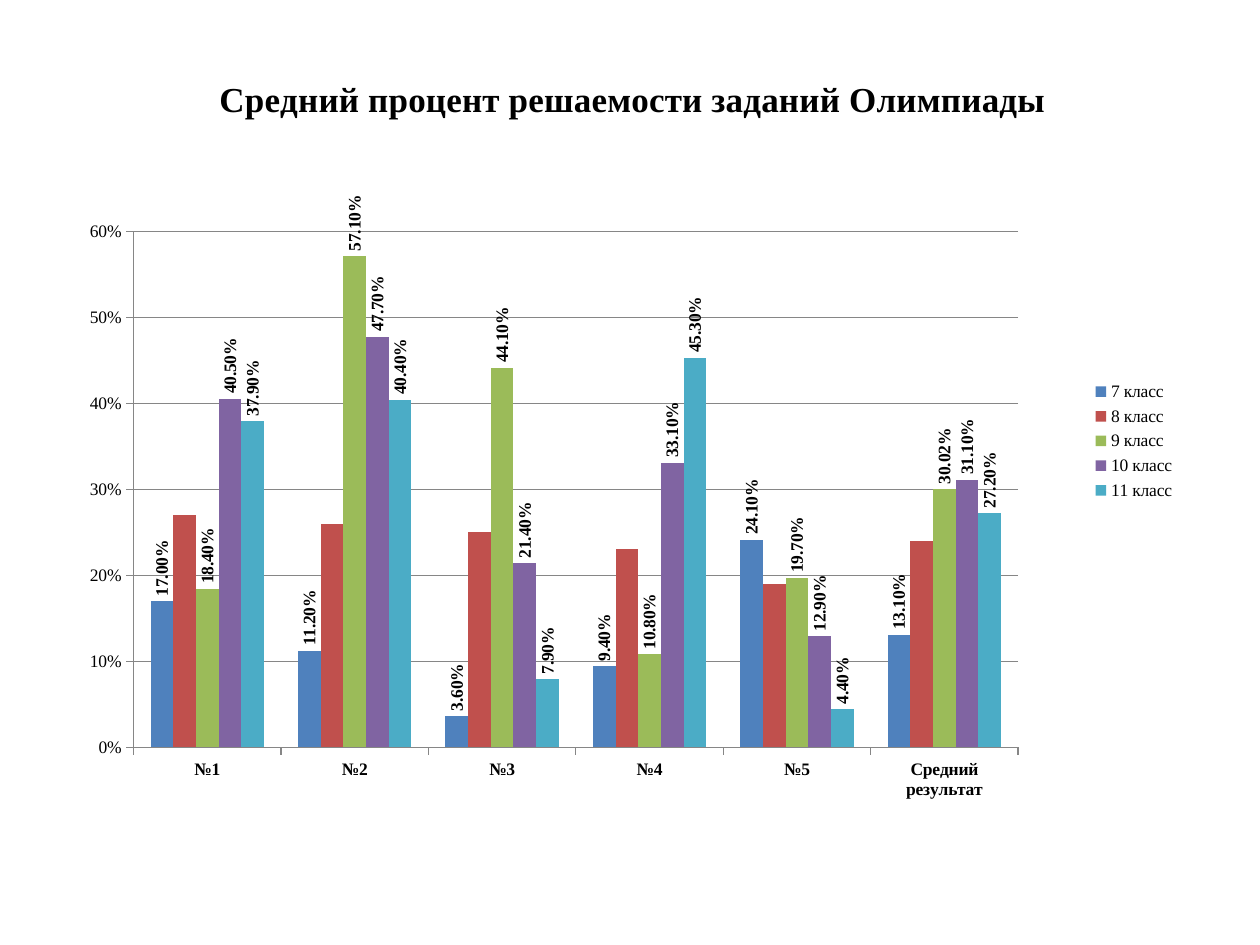
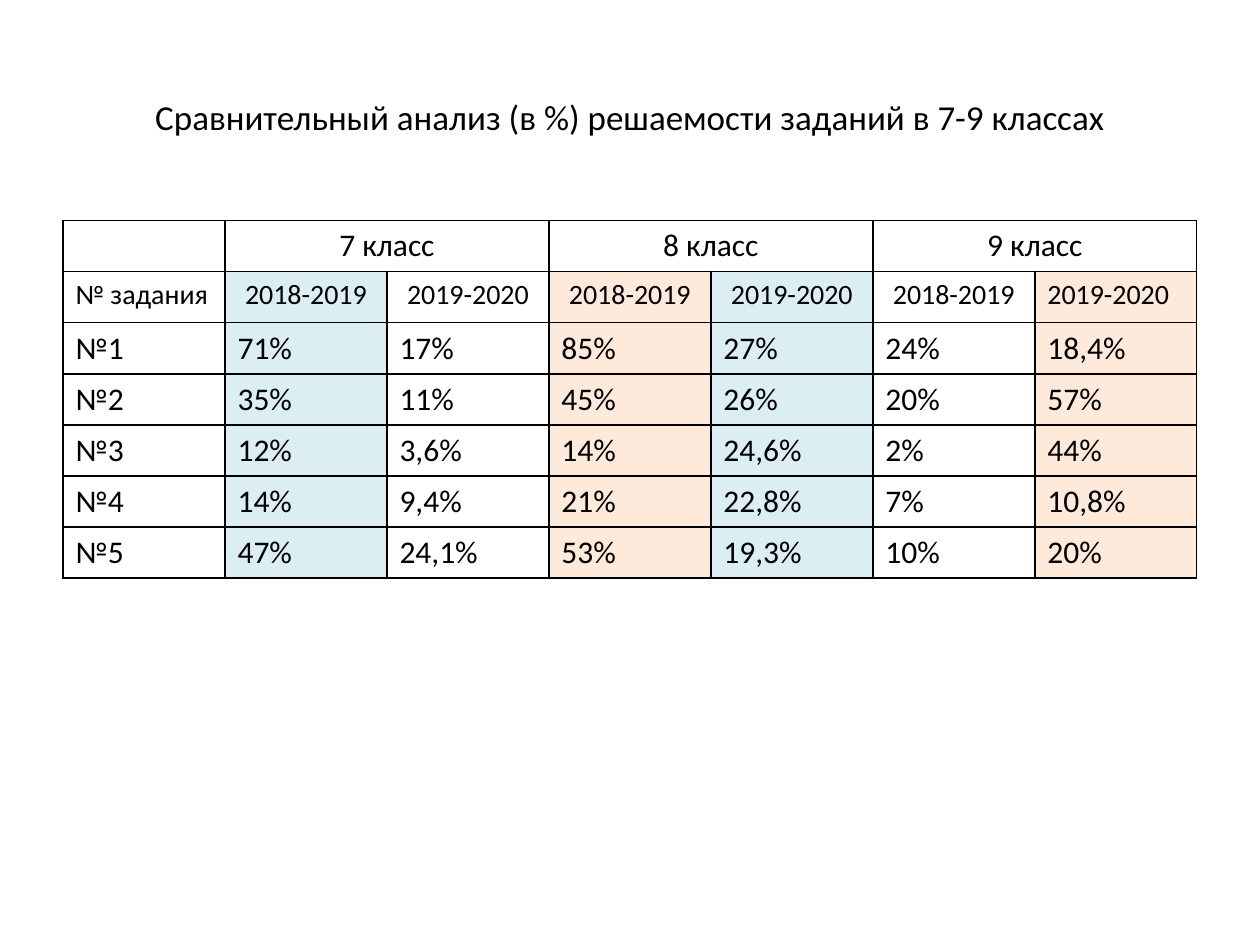
"""Build two slides on how well the Olympiad tasks were solved."""
from dataclasses import dataclass

from pptx import Presentation
from pptx.chart.data import CategoryChartData as ChartData
from pptx.dml.color import RGBColor as Color
from pptx.enum.chart import XL_CHART_TYPE as Kind
from pptx.enum.chart import XL_LABEL_POSITION as Spot
from pptx.enum.chart import XL_LEGEND_POSITION as Side
from pptx.enum.chart import XL_TICK_MARK as Tick
from pptx.enum.text import MSO_ANCHOR as Anchor
from pptx.enum.text import PP_ALIGN as Align
from pptx.oxml import parse_xml
from pptx.oxml.ns import nsdecls, qn
from pptx.util import Pt


@dataclass(frozen=True)
class Theme:
    """Colours, fonts and type sizes."""
    ink: str = "000000"
    grid: str = "868686"
    blue: str = "DBEEF4"
    peach: str = "FDEADA"
    bars: tuple = ("4F81BD", "C0504D", "9BBB59", "8064A2", "4BACC6")
    sans: str = "Calibri"
    serif: str = "Times New Roman"
    head: int = 20
    cell: int = 18
    year: int = 16
    small: int = 10


TASKS = ["№1", "№2", "№3", "№4", "№5"]
SCORES = {
    "7 класс": (0.17, 0.112, 0.036, 0.094, 0.241, 0.131),
    "8 класс": (0.27, 0.26, 0.25, 0.23, 0.19, 0.24),
    "9 класс": (0.184, 0.571, 0.441, 0.108, 0.197, 0.3002),
    "10 класс": (0.405, 0.477, 0.214, 0.331, 0.129, 0.311),
    "11 класс": (0.379, 0.404, 0.079, 0.453, 0.044, 0.272),
}
PLAIN = "8 класс"
GRADES = ["7 класс", "8 класс", "9 класс"]
YEARS = ["2018-2019", "2019-2020"]
RATES = [
    ["71%", "17%", "85%", "27%", "24%", "18,4%"],
    ["35%", "11%", "45%", "26%", "20%", "57%"],
    ["12%", "3,6%", "14%", "24,6%", "2%", "44%"],
    ["14%", "9,4%", "21%", "22,8%", "7%", "10,8%"],
    ["47%", "24,1%", "53%", "19,3%", "10%", "20%"],
]


class Deck:
    """Holds the theme and the current slide."""

    def __init__(self, theme):
        self.theme = theme
        self.show = Presentation()
        self.show.slide_width, self.show.slide_height = Pt(720), Pt(540)
        self.slide = None

    def page(self, layout):
        self.slide = self.show.slides.add_slide(self.show.slide_layouts[layout])

    def style(self, font, size, face, bold=False):
        font.size, font.name, font.bold = Pt(size), face, bold
        font.color.rgb = Color.from_string(self.theme.ink)

    def put(self, frame, text, size, face, align, bold=False):
        frame.text = text
        para = frame.paragraphs[0]
        para.alignment = align
        for run in para.runs:
            self.style(run.font, size, face, bold)

    def title(self, text, box):
        shape = self.slide.shapes.title
        shape.left, shape.top, shape.width, shape.height = map(Pt, box)
        shape.text_frame.vertical_anchor = Anchor.MIDDLE
        self.put(shape.text_frame, text, self.theme.head, self.theme.sans, Align.CENTER)

    def place(self, part, index, inner=False, **spots):
        for old in part.findall(qn("c:layout")):
            part.remove(old)
        target = '<c:layoutTarget val="inner"/>' if inner else ""
        modes = "".join(f'<c:{key}Mode val="edge"/>' for key in "xy")
        sizes = "".join(f'<c:{key} val="{val}"/>' for key, val in spots.items())
        part.insert(index, parse_xml(
            f'<c:layout {nsdecls("c")}><c:manualLayout>{target}{modes}{sizes}'
            "</c:manualLayout></c:layout>"))

    def line(self, form):
        form.line.color.rgb = Color.from_string(self.theme.grid)
        form.line.width = Pt(0.75)

    def chart(self, text, names, scores, box):
        theme = self.theme
        data = ChartData(number_format="0.00%")
        data.categories = names
        for name, vals in scores.items():
            data.add_series(name, vals)
        chart = self.slide.shapes.add_chart(
            Kind.COLUMN_CLUSTERED, *map(Pt, box), data).chart
        self.style(chart.font, theme.small, theme.serif)

        chart.has_title = True
        head = chart.chart_title
        self.put(head.text_frame, text, theme.head, theme.serif, Align.CENTER, True)
        head.include_in_layout = False
        self.place(head._element, 1, x=0.14, y=0.04)

        chart.has_legend = True
        chart.legend.position = Side.RIGHT
        chart.legend.include_in_layout = False
        self.place(chart._chartSpace.chart.plotArea, 0, True,
                   x=0.07, y=0.24, w=0.78, h=0.64)

        rates, tasks = chart.value_axis, chart.category_axis
        rates.minimum_scale, rates.maximum_scale, rates.major_unit = 0, 0.6, 0.1
        rates.tick_labels.number_format = "0%"
        rates.tick_labels.number_format_is_linked = False
        self.line(rates.major_gridlines.format)
        for axis in (rates, tasks):
            axis.major_tick_mark = Tick.OUTSIDE
            self.line(axis.format)
        self.style(tasks.tick_labels.font, theme.small, theme.serif, True)

        plot = chart.plots[0]
        plot.gap_width, plot.overlap, plot.vary_by_categories = 150, 0, False
        for row, tint in zip(plot.series, theme.bars):
            row.format.fill.solid()
            row.format.fill.fore_color.rgb = Color.from_string(tint)
            if row.name != PLAIN:
                self.label(row.data_labels)

    def label(self, marks):
        marks.show_value = True
        marks.position = Spot.OUTSIDE_END
        marks.number_format, marks.number_format_is_linked = "0.00%", False
        self.style(marks.font, self.theme.small, self.theme.serif, True)
        turn = marks._element.find(qn("c:txPr")).find(qn("a:bodyPr"))
        turn.set("rot", "-5400000")
        turn.set("vert", "horz")

    def table(self, rows, fills, box):
        theme = self.theme
        grid = self.slide.shapes.add_table(len(rows), len(rows[0]), *map(Pt, box)).table
        grid.first_row = grid.horz_banding = False
        for r, row in enumerate(rows):
            for c, text in enumerate(row):
                mid = r == 0 or (r == 1 and 0 < c < len(row) - 1)
                size = theme.year if r == 1 else theme.cell
                align = Align.CENTER if mid else Align.LEFT
                self.cell(grid.cell(r, c), text, size, align, fills.get(c) if r else None)
        for c in range(1, len(rows[0]), 2):
            grid.cell(0, c).merge(grid.cell(0, c + 1))

    def cell(self, cell, text, size, align, fill):
        self.put(cell.text_frame, text, size, self.theme.sans, align)
        props = cell._tc.get_or_add_tcPr()
        for side in "LRTB":
            props.append(parse_xml(
                f'<a:ln{side} {nsdecls("a")} w="{Pt(1)}"><a:solidFill>'
                f'<a:srgbClr val="{self.theme.ink}"/></a:solidFill></a:ln{side}>'))
        if fill:
            cell.fill.solid()
            cell.fill.fore_color.rgb = Color.from_string(fill)
        else:
            cell.fill.background()


def main():
    theme = Theme()
    deck = Deck(theme)

    deck.page(6)
    deck.chart("Средний процент решаемости заданий Олимпиады",
               TASKS + ["Средний результат"], SCORES, (31, 21.6, 648, 460.8))

    deck.page(5)
    deck.title("Сравнительный анализ (в %) решаемости заданий в 7-9 классах",
               (36, 21.6, 648, 90))
    top = [""] + [text for grade in GRADES for text in (grade, "")]
    rows = [top, ["№ задания"] + YEARS * len(GRADES)]
    rows += [[task] + rates for task, rates in zip(TASKS, RATES)]
    fills = {1: theme.blue, 3: theme.peach, 4: theme.blue, 6: theme.peach}
    deck.table(rows, fills, (36, 126, 648, 204.4))

    deck.show.save("out.pptx")


if __name__ == "__main__":
    main()
